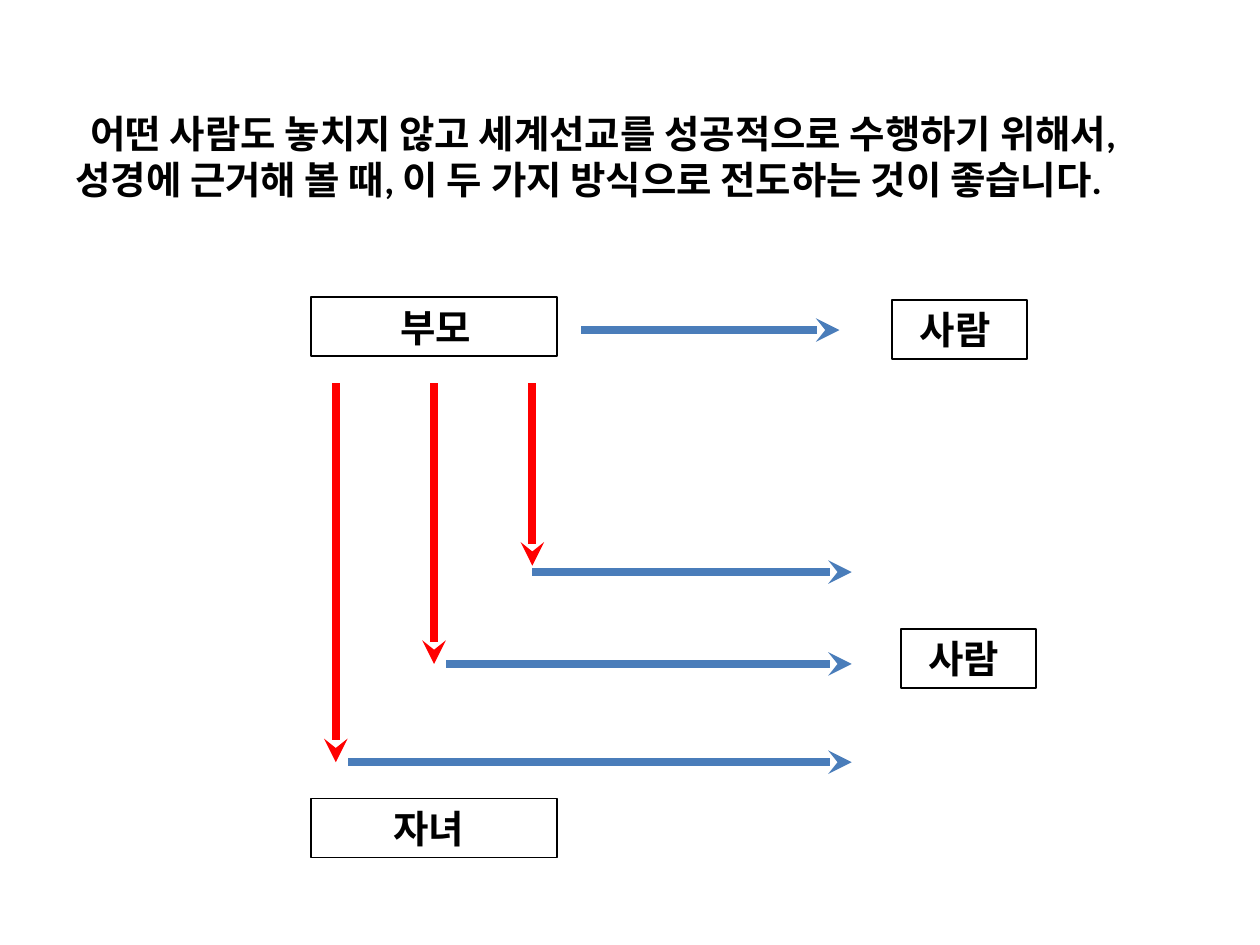
from dataclasses import dataclass

import pptx
import pptx.dml.color
import pptx.enum.shapes
import pptx.enum.text
import pptx.oxml
import pptx.oxml.ns
import pptx.util

BLACK = pptx.dml.color.RGBColor(0x00, 0x00, 0x00)
RED = pptx.dml.color.RGBColor(0xFF, 0x00, 0x00)
BLUE = pptx.dml.color.RGBColor(0x4A, 0x7D, 0xBA)
FONT = "Calibri"

# Square grid whose origin is the top left corner of the parent box
LEFT, TOP, CELL = 2.47, 2.36, 0.195
BOX_ROWS = 2.4


@dataclass(frozen=True)
class Box:
    text: str
    col: float
    row: float
    cols: float
    inset: float  # left margin in inches


@dataclass(frozen=True)
class Arrow:
    start: tuple[float, float]  # column, row
    end: tuple[float, float]
    color: pptx.dml.color.RGBColor


BOXES = [
    Box("부모", 0, 0, 10, 0.71),
    Box("자녀", 0, 20.4, 10, 0.65),
    Box("사람", 24, 13.5, 5.5, 0.22),
    Box("사람", 23.64, 0.1, 5.5, 0.22),
]

# Each red arrow goes down from the parent, then a blue one goes right:
# column, row of the red tip, column and row where the blue one starts
DROP_ROW, PEOPLE_COL = 3.5, 22
STEPS = [(9, 10.92, 9, 11.18), (5, 14.92, 5.5, 14.92), (1, 18.92, 1.5, 18.92)]


def x(col: float) -> int:
    return pptx.util.Inches(LEFT + col * CELL)


def y(row: float) -> int:
    return pptx.util.Inches(TOP + row * CELL)


def style_text(p) -> None:
    p.alignment = pptx.enum.text.PP_ALIGN.LEFT
    for r in p.runs:
        r.font.name = FONT
        r.font.size = pptx.util.Pt(22)
        r.font.bold = True
        r.font.color.rgb = BLACK


def add_heading(s, prs, text: str) -> None:
    width, height = prs.slide_width, prs.slide_height
    sp = s.shapes.add_textbox(
        int(width * 0.05), int(height * 0.11), int(width * 0.9), int(height * 0.81)
    )
    tf = sp.text_frame
    tf.word_wrap = True
    tf.text = text
    p = tf.paragraphs[0]
    style_text(p)
    # First-line indent
    p._p.get_or_add_pPr().set("indent", str(pptx.util.Inches(0.12)))


def add_box(s, box: Box) -> None:
    sp = s.shapes.add_shape(
        pptx.enum.shapes.MSO_SHAPE.RECTANGLE,
        x(box.col), y(box.row),
        pptx.util.Inches(box.cols * CELL), pptx.util.Inches(BOX_ROWS * CELL),
    )
    sp.shadow.inherit = False
    sp.fill.background()
    sp.line.color.rgb = BLACK
    sp.line.width = pptx.util.Pt(1)
    tf = sp.text_frame
    tf.word_wrap = True
    tf.vertical_anchor = pptx.enum.text.MSO_ANCHOR.TOP
    tf.margin_left = pptx.util.Inches(box.inset)
    tf.text = box.text
    style_text(tf.paragraphs[0])


def add_arrow(s, arrow: Arrow) -> None:
    (col1, row1), (col2, row2) = arrow.start, arrow.end
    sp = s.shapes.add_connector(
        pptx.enum.shapes.MSO_CONNECTOR.STRAIGHT, x(col1), y(row1), x(col2), y(row2)
    )
    sp.line.color.rgb = arrow.color
    sp.line.width = pptx.util.Pt(4.5)
    # Arrowhead, and no shadow
    ln = sp.line._get_or_add_ln()
    tail = pptx.oxml.parse_xml(
        f'<a:tailEnd {pptx.oxml.ns.nsdecls("a")} type="stealth"/>'
    )
    ln.append(tail)
    ln.addnext(pptx.oxml.parse_xml(f'<a:effectLst {pptx.oxml.ns.nsdecls("a")}/>'))


def main() -> None:
    prs = pptx.Presentation()
    prs.slide_width = pptx.util.Inches(10)
    prs.slide_height = pptx.util.Inches(7.5)
    s = prs.slides.add_slide(prs.slide_layouts[6])

    add_heading(
        s, prs,
        "어떤 사람도 놓치지 않고 세계선교를 성공적으로 수행하기 위해서, "
        "성경에 근거해 볼 때, 이 두 가지 방식으로 전도하는 것이 좋습니다.",
    )

    # Through the children to people
    for col, tip, blue_col, blue_row in STEPS:
        add_arrow(s, Arrow((col, DROP_ROW), (col, tip), RED))
        add_arrow(s, Arrow((blue_col, blue_row), (PEOPLE_COL, blue_row), BLUE))

    # Straight from the parent to people
    add_arrow(s, Arrow((11, 1.33), (21.5, 1.33), BLUE))

    for box in BOXES:
        add_box(s, box)

    prs.save("out.pptx")


if __name__ == "__main__":
    main()
